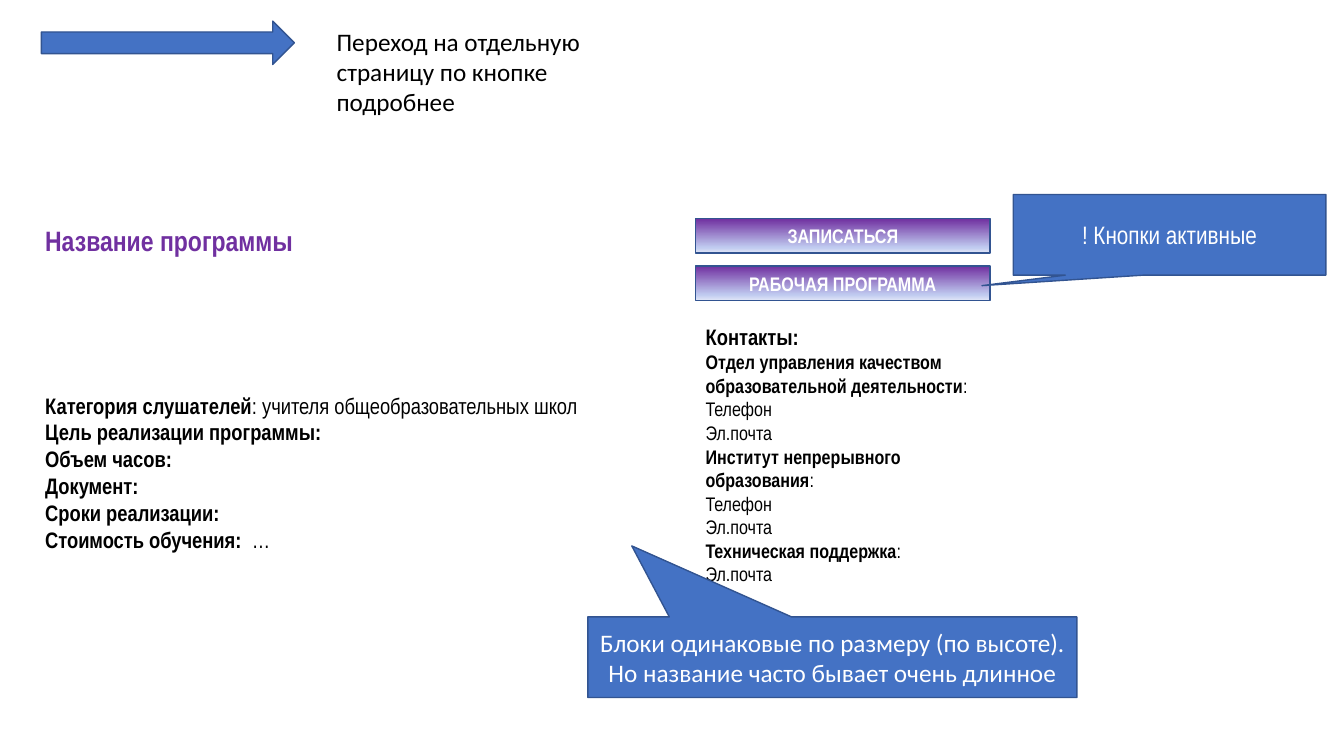
from copy import deepcopy

from pptx import Presentation
from pptx.dml.color import RGBColor
from pptx.enum import shapes, text
from pptx.oxml.ns import qn
from pptx.util import Inches, Pt

NARROW, REGULAR = "Arial Narrow", "Calibri"
BLACK, WHITE, BLUE, EDGE, PURPLE = "000000", "FFFFFF", "4472C4", "325491", "7030A0"
BUTTON_STOPS = [(0, PURPLE), (0.84, "C0CBF0"), (1, "E0E5F7")]
PRESET = shapes.MSO_SHAPE


def color(value):
    return RGBColor.from_string(value)


class SlideBuilder:
    def __init__(self, slide):
        self.slide = slide

    def run(self, paragraph, words, size, font=NARROW, ink=BLACK, bold=False):
        run = paragraph.add_run()
        run.text = words
        run.font.name, run.font.size, run.font.bold = font, Pt(size), bold
        run.font.color.rgb = color(ink)

    def shape(self, preset, box, caption="", size=18, font=NARROW, bold=False, adjust=()):
        shape = self.slide.shapes.add_shape(preset, *map(Inches, box))
        shape.shadow.inherit = False
        shape.fill.solid()
        shape.fill.fore_color.rgb = color(BLUE)
        shape.line.color.rgb = color(EDGE)
        shape.line.width = Pt(1)
        for index, value in enumerate(adjust):
            shape.adjustments[index] = value
        if caption:
            frame = shape.text_frame
            frame.word_wrap = True
            frame.vertical_anchor = text.MSO_ANCHOR.MIDDLE
            frame.paragraphs[0].alignment = text.PP_ALIGN.CENTER
            self.run(frame.paragraphs[0], caption, size, font, WHITE, bold)
        return shape

    def button(self, box, caption):
        button = self.shape(PRESET.RECTANGLE, box, caption, 14, bold=True)
        button.fill.gradient()
        button.fill.gradient_angle = 270
        stop_list = button._element.spPr.find(qn("a:gradFill")).find(qn("a:gsLst"))
        stop_list.append(deepcopy(stop_list[-1]))
        for stop, (position, shade) in zip(button.fill.gradient_stops, BUTTON_STOPS):
            stop.position = position
            stop.color.rgb = color(shade)

    def text_box(self, box):
        frame = self.slide.shapes.add_textbox(*map(Inches, box)).text_frame
        frame.word_wrap = True
        frame.auto_size = text.MSO_AUTO_SIZE.SHAPE_TO_FIT_TEXT
        return frame

    def titled_list(self, box, title, title_size, title_ink, lines, size, gap=0):
        """Bold title, then lines given as (bold part, plain part)."""
        frame = self.text_box(box)
        self.run(frame.paragraphs[0], title, title_size, ink=title_ink, bold=True)
        for index, (label, detail) in enumerate(lines):
            paragraph = frame.add_paragraph()
            if index == 0 and gap:
                paragraph.space_before = Pt(gap)
            if label:
                self.run(paragraph, label, size, bold=True)
            if detail:
                self.run(paragraph, detail, size)


def main():
    deck = Presentation()
    deck.slide_width, deck.slide_height = Inches(13.33), Inches(7.5)
    page = SlideBuilder(deck.slides.add_slide(deck.slide_layouts[6]))

    page.shape(PRESET.RIGHT_ARROW, (0.41, 0.21, 2.51, 0.43))
    transition = page.text_box((3.24, 0.21, 2.69, 1.01))
    page.run(transition.paragraphs[0],
             "Переход на отдельную страницу по кнопке подробнее", 18, REGULAR)

    program = [
        ("Категория слушателей", ": учителя общеобразовательных школ"),
        ("Цель реализации программы:", ""),
        ("Объем часов:", ""),
        ("Документ:", ""),
        ("Сроки реализации:", ""),
        ("Стоимость обучения: ", " …"),
    ]
    page.titled_list((0.35, 2.17, 5.9, 3.4), "Название программы", 20, PURPLE,
                     program, 16, gap=96)

    for row, caption in enumerate(["ЗАПИСАТЬСЯ", "РАБОЧАЯ ПРОГРАММА"]):
        page.button((6.9, 2.17 + 0.47 * row, 2.92, 0.34), caption)
    page.shape(PRESET.RECTANGULAR_CALLOUT, (10.05, 1.93, 3.1, 0.8),
               "! Кнопки активные", adjust=(-0.6, 0.63))

    phone, mail = ("", "Телефон"), ("", "Эл.почта")
    contacts = [
        ("Отдел управления качеством образовательной деятельности", ":"), phone, mail,
        ("Институт непрерывного образования", ":"), phone, mail,
        ("Техническая поддержка", ":"), mail,
    ]
    page.titled_list((6.9, 3.16, 2.92, 2.73), "Контакты:", 16, BLACK, contacts, 14)

    page.shape(PRESET.RECTANGULAR_CALLOUT, (5.83, 6.12, 4.85, 0.8),
               "Блоки одинаковые по размеру (по высоте). "
               "Но название часто бывает очень длинное",
               font=REGULAR, adjust=(-0.41, -1.38))
    deck.save("out.pptx")


if __name__ == "__main__":
    main()
